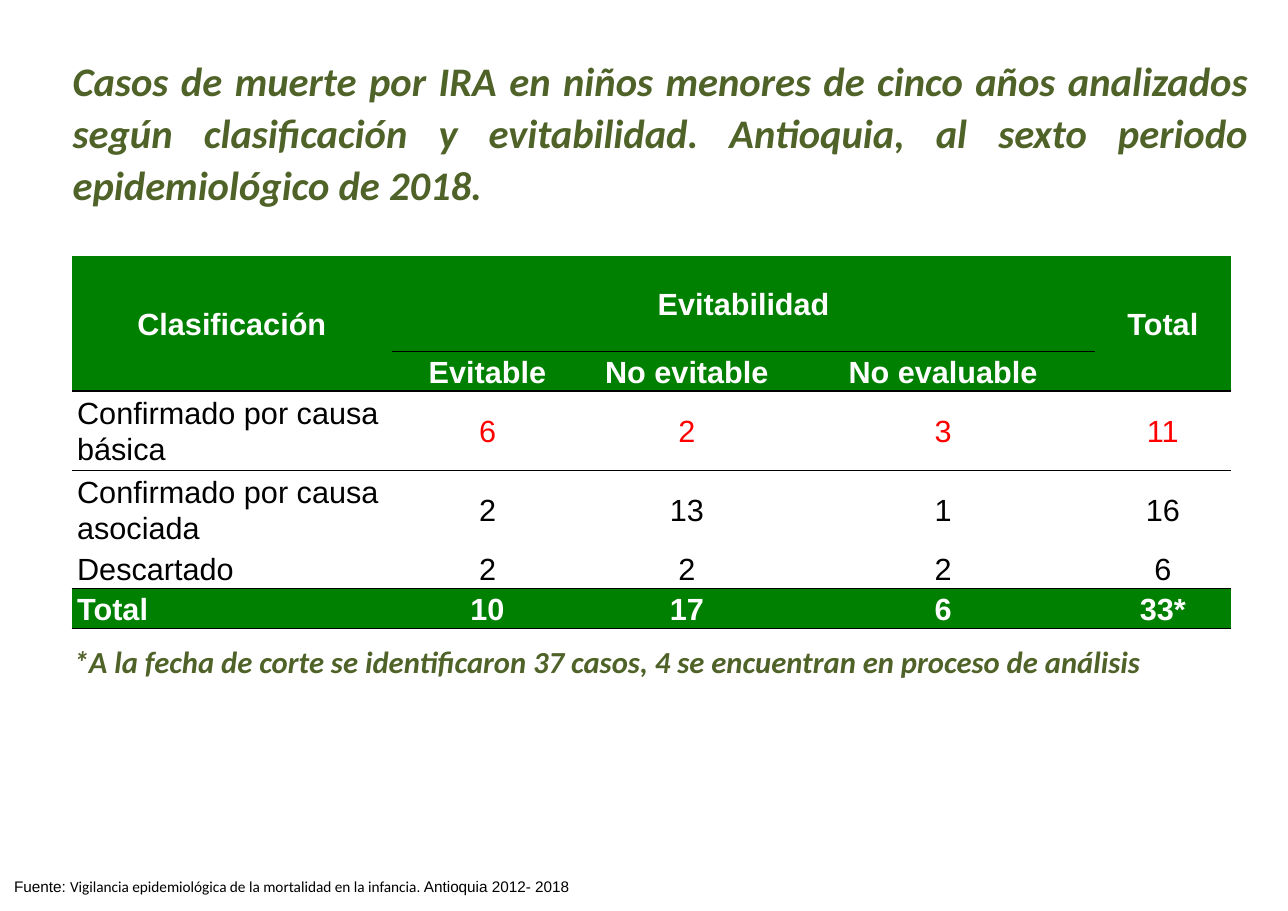
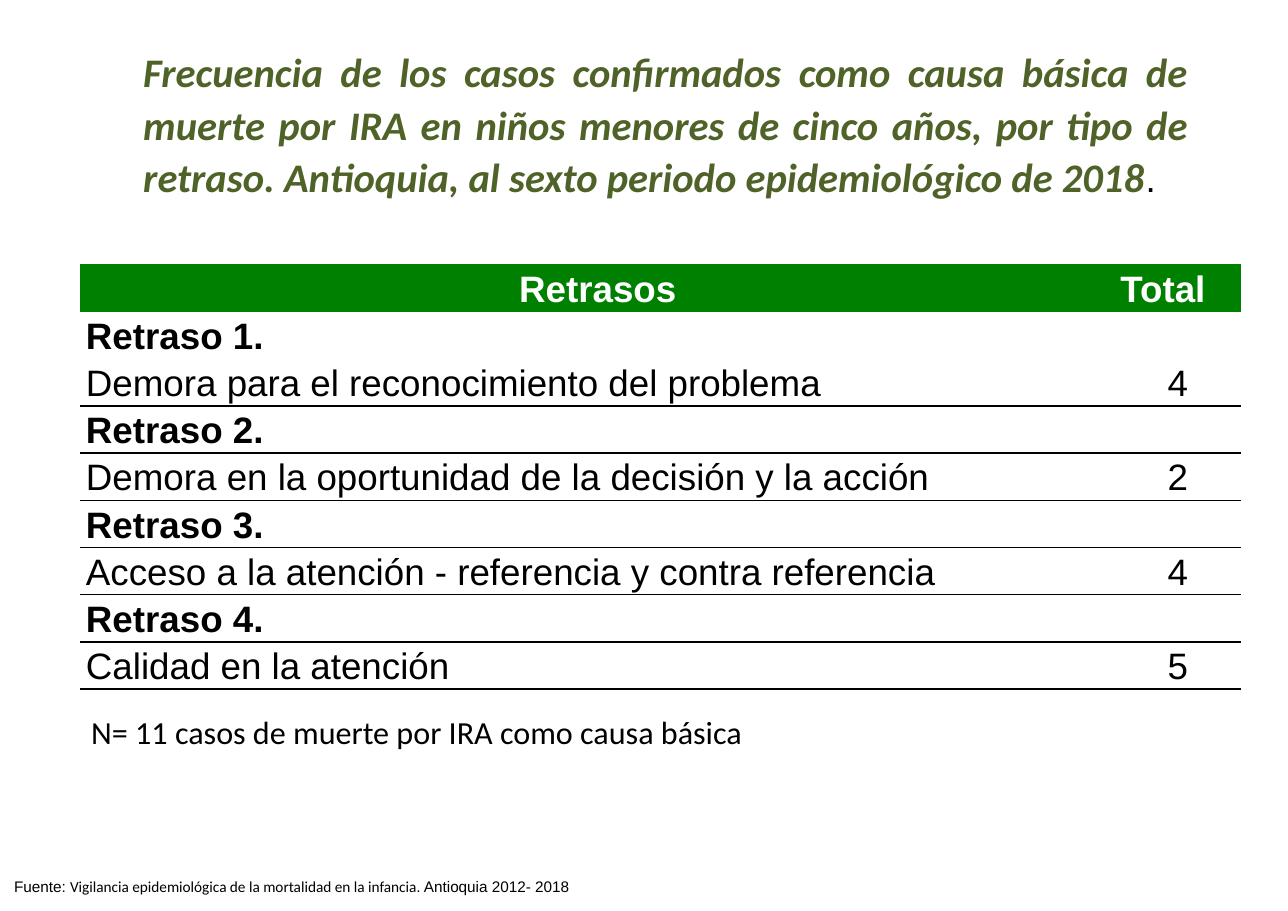
from lxml import etree
from pptx import Presentation
from pptx.dml.color import RGBColor
from pptx.enum.text import MSO_ANCHOR, MSO_AUTO_SIZE, PP_ALIGN
from pptx.oxml.ns import qn
from pptx.util import Inches, Pt

LEFT, CENTER, JUSTIFY = PP_ALIGN.LEFT, PP_ALIGN.CENTER, PP_ALIGN.JUSTIFY
TOP, MIDDLE = MSO_ANCHOR.TOP, MSO_ANCHOR.MIDDLE
GROW = MSO_AUTO_SIZE.SHAPE_TO_FIT_TEXT
NO_STYLE = "{2D5ABB26-0587-4C30-8999-92F81FD0307C}"

OLIVE, GREEN, RED, BLACK, WHITE = "4F6228", "008000", "FF0000", "000000", "FFFFFF"
HEAD, BODY = "Calibri", "Arial"
SPACING = 1.07


def rgb(value):
    return RGBColor.from_string(value)


def add_run(p, text, size, font=BODY, color=BLACK, bold=False, italic=False):
    r = p.add_run()
    r.text = text
    r.font.size, r.font.name = Pt(size), font
    r.font.bold, r.font.italic = bold, italic
    r.font.color.rgb = rgb(color)


def add_border(cell, side):
    ln = etree.SubElement(cell._tc.get_or_add_tcPr(), qn(side), w=str(Pt(1)))
    fill = etree.SubElement(ln, qn("a:solidFill"))
    etree.SubElement(fill, qn("a:srgbClr"), val=BLACK)


class Deck:
    def __init__(self):
        self.prs = Presentation()
        self.prs.slide_width = Inches(11.69)
        self.prs.slide_height = Inches(8.27)
        self.s = None

    def new_slide(self, title, x, y, w, ending=None):
        self.s = self.prs.slides.add_slide(self.prs.slide_layouts[5])
        sp = self.s.shapes.title
        sp.left, sp.top, sp.width, sp.height = map(Inches, (x, y, w, 1.53))
        tf = sp.text_frame
        tf.word_wrap, tf.auto_size, tf.vertical_anchor = True, GROW, TOP
        p = tf.paragraphs[0]
        p.alignment, p.line_spacing = JUSTIFY, SPACING
        add_run(p, title, 26.5, HEAD, OLIVE, True, True)
        if ending:
            add_run(p, ending, 24)
        self.source()

    def text(self, x, y, w, h, wrap=False):
        sp = self.s.shapes.add_textbox(*map(Inches, (x, y, w, h)))
        tf = sp.text_frame
        tf.word_wrap, tf.auto_size = wrap, GROW
        return tf.paragraphs[0]

    def source(self):
        p = self.text(0.03, 7.91, 9.06, 0.27, True)
        add_run(p, "Fuente: ", 10)
        add_run(p, "Vigilancia epidemiológica de la mortalidad en la infancia", 10, HEAD)
        add_run(p, ". Antioquia 2012- 2018", 10)

    def table(self, x, y, widths, heights, rules):
        frame = self.s.shapes.add_table(
            len(heights), len(widths), Inches(x), Inches(y),
            Inches(sum(widths)), Inches(sum(heights)))
        tbl = frame.table
        tbl.first_row = tbl.horz_banding = False
        tbl._tbl.tblPr.find(qn("a:tableStyleId")).text = NO_STYLE
        for col, width in zip(tbl.columns, widths):
            col.width = Inches(width)
        for row, height in zip(tbl.rows, heights):
            row.height = Inches(height)
        for r, columns in rules:
            for c in columns:
                add_border(tbl.cell(r, c), "a:lnB")
                if r + 1 < len(heights):
                    add_border(tbl.cell(r + 1, c), "a:lnT")
        return tbl

    def cell(self, cell, text, size, align=CENTER, color=BLACK, bold=False, fill=None):
        cell.margin_left = cell.margin_right = Inches(0.05)
        cell.margin_top = cell.margin_bottom = 0
        cell.vertical_anchor = MIDDLE
        if fill:
            cell.fill.solid()
            cell.fill.fore_color.rgb = rgb(fill)
        else:
            cell.fill.background()
        p = cell.text_frame.paragraphs[0]
        p.alignment, p.line_spacing = align, SPACING
        if text:
            add_run(p, text, size, BODY, color, bold)
        else:
            p.font.size = Pt(size)

    def header(self, cell, text, size, align=CENTER):
        self.cell(cell, text, size, align, WHITE, True, GREEN)


def avoidability_slide(deck):
    deck.new_slide(
        "Casos de muerte por IRA en niños menores de cinco años analizados según "
        "clasificación y evitabilidad. Antioquia, al sexto periodo epidemiológico de 2018.",
        0.56, 0.43, 10.88)
    rows = [
        ("Clasificación", "Evitabilidad", "", "", "Total"),
        ("", "Evitable", "No evitable", "No evaluable", ""),
        ("Confirmado por causa básica", "6", "2", "3", "11"),
        ("Confirmado por causa asociada", "2", "13", "1", "16"),
        ("Descartado", "2", "2", "2", "6"),
        ("Total", "10", "17", "6", "33*"),
    ]
    rules = [(0, range(1, 4)), (1, range(5)), (4, range(5)), (5, range(5))]
    tbl = deck.table(0.65, 2.32, (2.91, 1.73, 1.89, 2.76, 1.23),
                     (0.87, 0.36, 0.72, 0.71, 0.36, 0.36), rules)
    for r, row in enumerate(rows):
        for c, text in enumerate(row):
            align = LEFT if c == 0 and r > 1 else CENTER
            if r in (0, 1, 5):
                deck.header(tbl.cell(r, c), text, 20, align)
            else:
                color = RED if r == 2 and c > 0 else BLACK
                deck.cell(tbl.cell(r, c), text, 20, align, color)
    for first, last in (((0, 0), (1, 0)), ((0, 1), (0, 3)), ((0, 4), (1, 4))):
        tbl.cell(*first).merge(tbl.cell(*last))
    add_run(deck.text(0.57, 5.79, 9.95, 0.44),
            "*A la fecha de corte se identificaron 37 casos, 4 se encuentran en proceso de análisis",
            20, HEAD, OLIVE, True, True)


def delays_slide(deck):
    deck.new_slide(
        "Frecuencia de los casos confirmados como causa básica de muerte por IRA en niños "
        "menores de cinco años, por tipo de retraso. Antioquia, al sexto periodo "
        "epidemiológico de 2018",
        1.2, 0.35, 9.69, ".")
    delays = [
        ("Demora para el reconocimiento del problema", "4"),
        ("Demora en la oportunidad de la decisión y la acción", "2"),
        ("Acceso a la atención - referencia y contra referencia", "4"),
        ("Calidad en la atención", "5"),
    ]
    count = 1 + 2 * len(delays)
    tbl = deck.table(0.73, 2.4, (9.39, 1.14), [3.85 / count] * count,
                     [(r, range(2)) for r in range(2, count, 2)])
    deck.header(tbl.cell(0, 0), "Retrasos", 24)
    deck.header(tbl.cell(0, 1), "Total", 24, LEFT)
    for i, (delay, total) in enumerate(delays, 1):
        r = 2 * i
        deck.cell(tbl.cell(r - 1, 0), f"Retraso {i}.", 24, LEFT, bold=True)
        deck.cell(tbl.cell(r - 1, 1), "", 18)
        deck.cell(tbl.cell(r, 0), delay, 24, LEFT)
        deck.cell(tbl.cell(r, 1), total, 24)
    add_run(deck.text(0.73, 6.42, 6.33, 0.45),
            "N= 11 casos de muerte por IRA como causa básica", 21, HEAD)


def main():
    deck = Deck()
    avoidability_slide(deck)
    delays_slide(deck)
    deck.prs.save("out.pptx")


if __name__ == "__main__":
    main()
